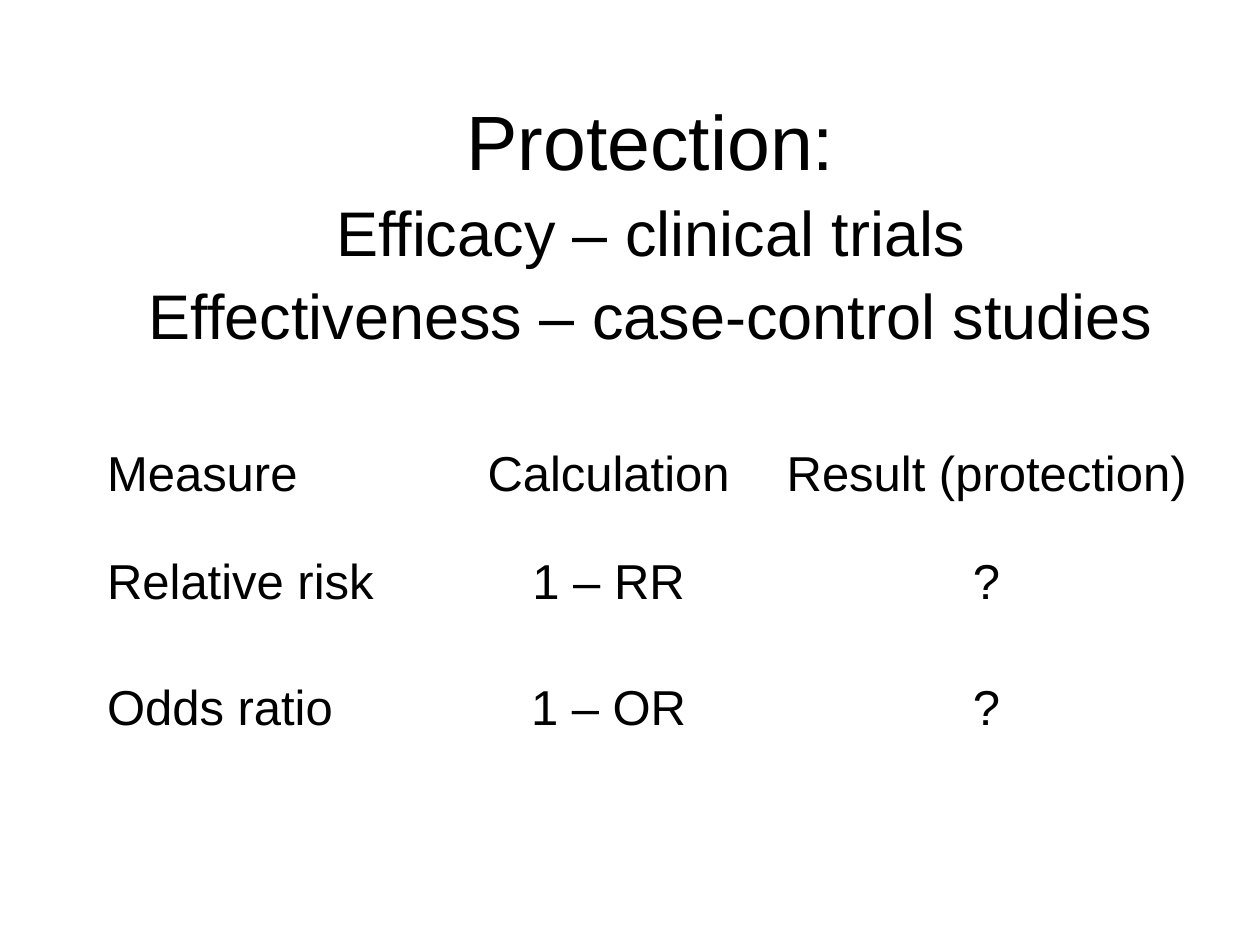
import pptx
import pptx.dml.color
import pptx.enum.text
import pptx.util

Inches = pptx.util.Inches
Pt = pptx.util.Pt
ALIGN = pptx.enum.text.PP_ALIGN

COLS = [2.83, 2.5, 3.5]
ROWS = [2.75, 0.86, 1, 0.83]
HEAD = [
    ("Protection:", 44),
    ("Efficacy – clinical trials", 36),
    ("Effectiveness – case-control studies", 36),
]
BODY = [
    ["Measure", "Calculation", "Result (protection)"],
    ["Relative risk", "1 – RR", "?"],
    ["Odds ratio", "1 – OR", "?"],
]


def color(code):
    return pptx.dml.color.RGBColor.from_string(code)


class Deck:
    font = "Arial"
    ink = "000000"

    def __init__(self, wide, high):
        self.prs = pptx.Presentation()
        self.prs.slide_width = Inches(wide)
        self.prs.slide_height = Inches(high)

    def blank(self):
        self.slide = self.prs.slides.add_slide(self.prs.slide_layouts[6])

    def table(self, left, top, cols, rows):
        """Add a table without fills or banding."""
        grid = self.slide.shapes.add_table(
            len(rows), len(cols), Inches(left), Inches(top),
            Inches(sum(cols)), Inches(sum(rows))).table
        grid.first_row = grid.horz_banding = False
        for col, wide in zip(grid.columns, cols):
            col.width = Inches(wide)
        for row, high in zip(grid.rows, rows):
            row.height = Inches(high)
        for cell in grid.iter_cells():
            cell.fill.background()
        return grid

    def label(self, cell, lines, align):
        """Fill a cell with (text, size) lines, spaced by a fifth of their size."""
        frame = cell.text_frame
        for i, (text, size) in enumerate(lines):
            para = frame.add_paragraph() if i else frame.paragraphs[0]
            para.text = text
            para.alignment = align
            para.space_before = Pt(size * 0.2 if i else 0)
            para.font.name = self.font
            para.font.size = Pt(size)
            para.font.color.rgb = color(self.ink)


def main():
    deck = Deck(10, 7.5)
    deck.blank()
    grid = deck.table(0.75, 0.75, COLS, ROWS)
    grid.cell(0, 0).merge(grid.cell(0, 2))
    deck.label(grid.cell(0, 0), HEAD, ALIGN.CENTER)
    for r, row in enumerate(BODY, 1):
        for c, text in enumerate(row):
            align = ALIGN.CENTER if c else ALIGN.LEFT
            deck.label(grid.cell(r, c), [(text, 28)], align)
    deck.prs.save("out.pptx")


if __name__ == "__main__":
    main()
